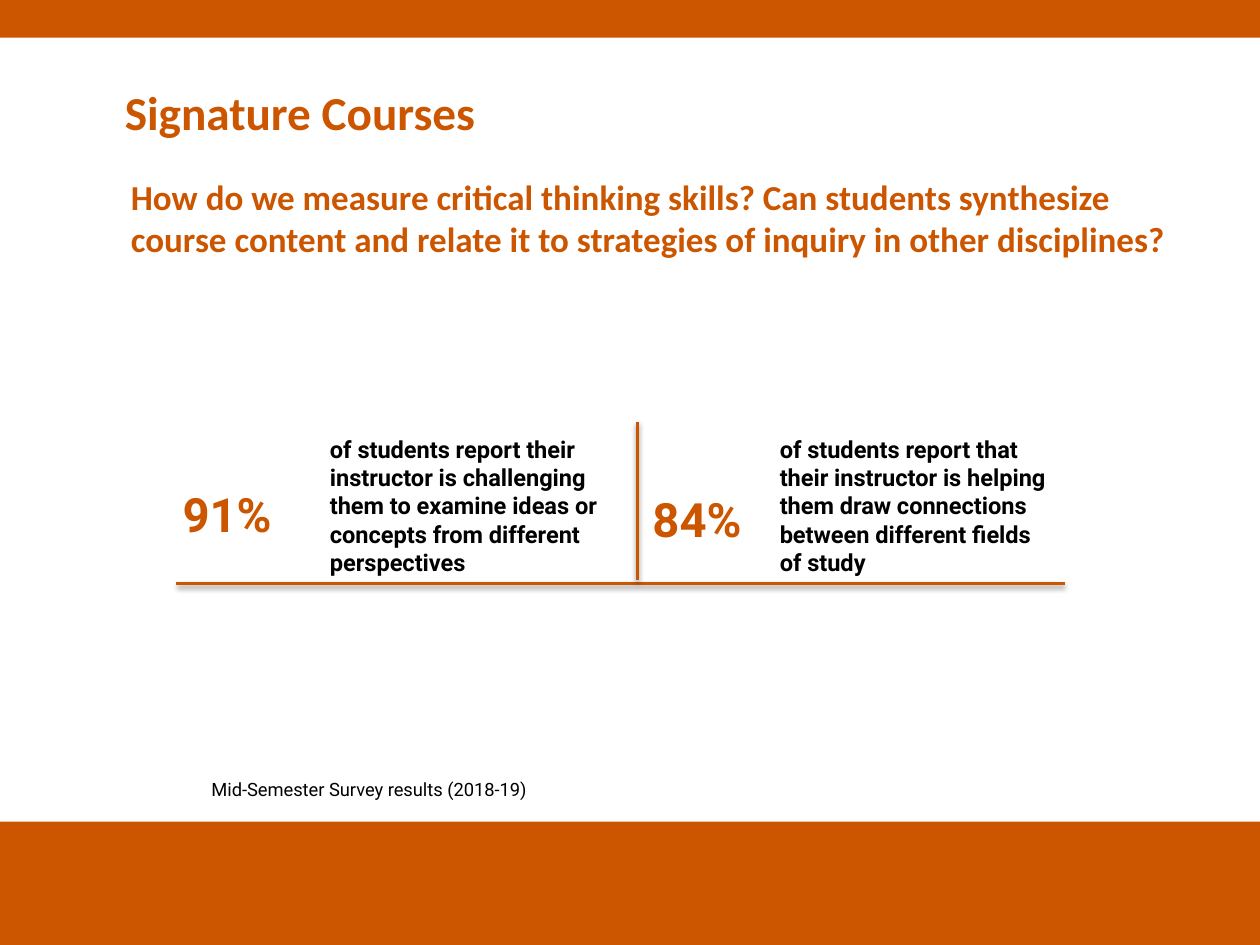
"""Build the Signature Courses survey results slide."""
import lxml.etree
import pptx
import pptx.dml.color
import pptx.enum.shapes
import pptx.enum.text
import pptx.oxml.ns
import pptx.util
from dataclasses import dataclass

Inches = pptx.util.Inches
Pt = pptx.util.Pt
RGB = pptx.dml.color.RGBColor.from_string


@dataclass(frozen=True)
class Theme:
    accent: str = "CC5500"
    ink: str = "000000"
    heading_font: str = "Calibri"
    body_font: str = "Roboto"
    large: float = 27
    question: float = 20
    body: float = 13.5
    source: float = 10.5
    rule: float = 2


THEME = Theme()
TITLE = "Signature Courses"
QUESTION = (
    "How do we measure critical thinking skills? Can students synthesize "
    "course content and relate it to strategies of inquiry in other disciplines?"
)
SOURCE = "Mid-Semester Survey results (2018-19)"
FINDINGS = [
    {
        "value": "91%",
        "value_at": (1.35, 3.8),
        "text": "of students report their instructor is challenging them "
                "to examine ideas or concepts from different perspectives",
        "text_at": (2.52, 3.4),
    },
    {
        "value": "84%",
        "value_at": (5.08, 3.84),
        "text": "of students report that their instructor is helping them "
                "draw connections between different fields of study",
        "text_at": (6.09, 3.4),
    },
]
BANDS = [(0, 6.52, 10, 0.98), (0, 0, 10, 0.3)]
RULES = [(1.4, 4.63, 8.45, 4.63), (5.06, 3.35, 5.06, 4.6)]


def add_band(s, box):
    sp = s.shapes.add_shape(
        pptx.enum.shapes.MSO_SHAPE.RECTANGLE, *map(Inches, box))
    sp.shadow.inherit = False
    sp.fill.solid()
    sp.fill.fore_color.rgb = RGB(THEME.accent)
    sp.line.fill.background()


def add_text(s, box, text, size, font, color, bold=True, after=0):
    sp = s.shapes.add_textbox(*map(Inches, box))
    tf = sp.text_frame
    tf.word_wrap = True
    p = tf.paragraphs[0]
    p.space_after = Pt(after)
    r = p.add_run()
    r.text = text
    r.font.size = Pt(size)
    r.font.name = font
    r.font.bold = bold
    r.font.color.rgb = RGB(color)
    return tf


def add_rule(s, ends):
    line = s.shapes.add_connector(
        pptx.enum.shapes.MSO_CONNECTOR.STRAIGHT, *map(Inches, ends))
    line.line.color.rgb = RGB(THEME.accent)
    line.line.width = Pt(THEME.rule)
    qn = pptx.oxml.ns.qn
    sub = lxml.etree.SubElement
    effects = sub(line._element.spPr, qn("a:effectLst"))
    shadow = sub(effects, qn("a:outerShdw"), blurRad=str(Pt(3.1)),
                 dist=str(Pt(1.6)), dir="5400000", rotWithShape="0")
    color = sub(shadow, qn("a:srgbClr"), val=THEME.ink)
    sub(color, qn("a:alpha"), val="38000")


def main():
    prs = pptx.Presentation()
    prs.slide_width, prs.slide_height = Inches(10), Inches(7.5)
    s = prs.slides.add_slide(prs.slide_layouts[6])

    for box in BANDS:
        add_band(s, box)

    tf = add_text(s, (0.92, 0.66, 6.75, 0.45), TITLE, THEME.large,
                  THEME.heading_font, THEME.accent)
    tf.vertical_anchor = pptx.enum.text.MSO_ANCHOR.MIDDLE
    tf.margin_left = tf.margin_right = Inches(0.07)
    tf.margin_top = tf.margin_bottom = Inches(0.04)
    add_text(s, (0.94, 1.34, 8.65, 0.81), QUESTION, THEME.question,
             THEME.heading_font, THEME.accent, after=9)

    for finding in FINDINGS:
        add_text(s, (*finding["value_at"], 1.31, 0.56), finding["value"],
                 THEME.large, THEME.body_font, THEME.accent)
        add_text(s, (*finding["text_at"], 2.39, 1.69), finding["text"],
                 THEME.body, THEME.body_font, THEME.ink)

    for ends in RULES:
        add_rule(s, ends)

    add_text(s, (1.58, 6.13, 3.12, 0.28), SOURCE, THEME.source,
             THEME.body_font, THEME.ink, bold=False, after=9)
    prs.save("out.pptx")


if __name__ == "__main__":
    main()
